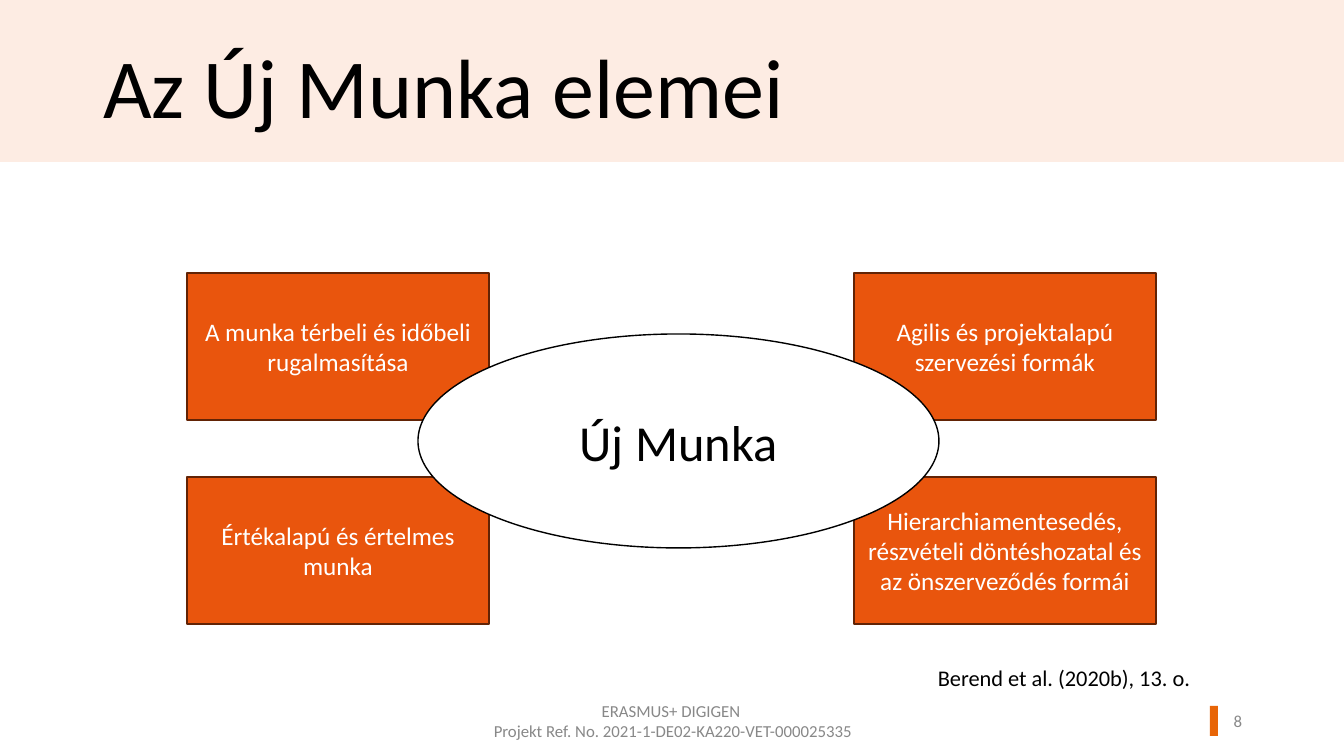
"""Build the slide on the elements of New Work."""
from pptx import Presentation
from pptx.dml.color import RGBColor
from pptx.enum.shapes import MSO_SHAPE
from pptx.enum.text import MSO_ANCHOR, MSO_AUTO_SIZE, PP_ALIGN
from pptx.util import Emu, Pt

RECT, OVAL = MSO_SHAPE.RECTANGLE, MSO_SHAPE.OVAL
TOP, MIDDLE = MSO_ANCHOR.TOP, MSO_ANCHOR.MIDDLE
LEFT, CENTER, RIGHT = PP_ALIGN.LEFT, PP_ALIGN.CENTER, PP_ALIGN.RIGHT
NO_FIT = MSO_AUTO_SIZE.NONE
COLORS = {
    "band": "FDECE3", "accent": "E86507", "box": "E9550D", "box_line": "622305",
    "white": "FFFFFF", "black": "000000", "grey": "888888",
}
EMU_PER_PX = 914400 / 100.8


def add_shape(kind, box, fill, line=None):
    sp = s.shapes.add_shape(kind, *[Emu(round(n * EMU_PER_PX)) for n in box])
    sp.shadow.inherit = False
    sp.fill.solid()
    sp.fill.fore_color.rgb = RGBColor.from_string(COLORS[fill])
    if line:
        sp.line.color.rgb = RGBColor.from_string(COLORS[line])
        sp.line.width = Pt(1)
    else:
        sp.line.fill.background()
    return sp


def set_text(sp, text, size, color, align=CENTER, anchor=MIDDLE):
    tf = sp.text_frame
    frame = {"word_wrap": True, "auto_size": NO_FIT, "vertical_anchor": anchor}
    for name, value in frame.items():
        setattr(tf, name, value)
    p = tf.paragraphs[0]
    p.text = text
    p.alignment = align
    for r in p.runs:
        for name, value in {"name": "Calibri", "size": Pt(size), "bold": False}.items():
            setattr(r.font, name, value)
        r.font.color.rgb = RGBColor.from_string(COLORS[color])


prs = Presentation()
prs.slide_width, prs.slide_height = [Emu(round(n * EMU_PER_PX)) for n in (1344, 756)]
s = prs.slides.add_slide(prs.slide_layouts[5])

add_shape(RECT, (0, 0, 1344, 162), "band")
add_shape(RECT, (1210, 706, 8, 30), "accent")

title = s.shapes.title
for name, value in {"left": 93, "top": 41, "width": 1001, "height": 86}.items():
    setattr(title, name, Emu(round(value * EMU_PER_PX)))
set_text(title, "Az Új Munka elemei", 60, "black", LEFT, TOP)
title.text_frame.paragraphs[0].line_spacing = 0.9
title.element.getparent().append(title.element)

footer = "ERASMUS+ DIGIGEN \vProjekt Ref. No. 2021-1-DE02-KA220-VET-000025335"
captions = [
    ((1186, 701, 66, 40), "8", 12, "grey", RIGHT, MIDDLE),
    ((446, 701, 454, 40), footer, 12, "grey", CENTER, MIDDLE),
    ((820, 659, 488, 37), "Berend et al. (2020b), 13. o.", 16, "black", CENTER, TOP),
]
for box, *text_format in captions:
    sp = s.shapes.add_textbox(*[Emu(round(n * EMU_PER_PX)) for n in box])
    set_text(sp, *text_format)

elements = [
    "A munka térbeli és időbeli rugalmasítása",
    "Agilis és projektalapú szervezési formák",
    "Értékalapú és értelmes munka",
    "Hierarchiamentesedés, részvételi döntéshozatal és az önszerveződés formái",
]
for i, text in enumerate(elements):
    row, col = divmod(i, 2)
    sp = add_shape(RECT, (187 + 667 * col, 273 + 204 * row, 302, 147), "box", "box_line")
    set_text(sp, text, 18, "white")

center = add_shape(OVAL, (418, 334, 521, 214), "white", "black")
set_text(center, "Új Munka", 36, "black")

prs.save("out.pptx")
